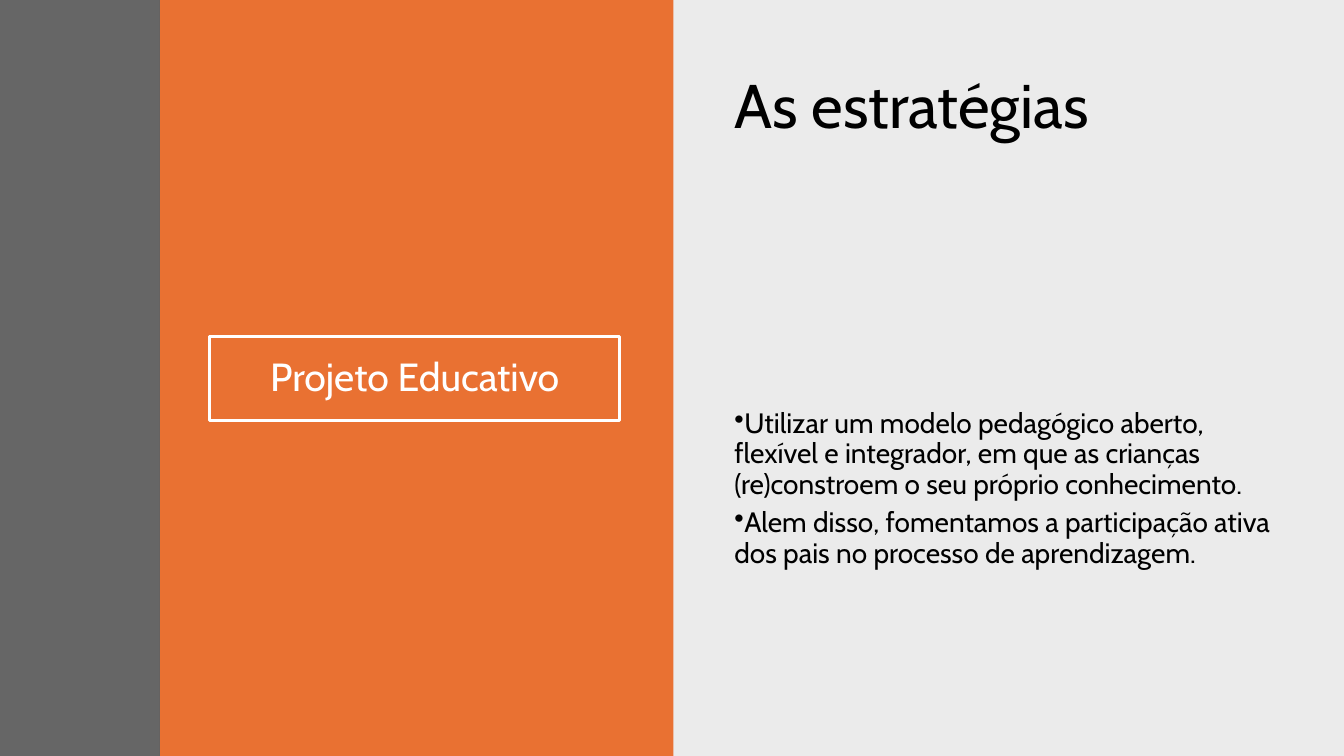
from dataclasses import dataclass
from typing import Optional

from lxml.etree import SubElement
from pptx import Presentation
from pptx.dml.color import RGBColor
from pptx.enum.shapes import MSO_SHAPE as Shape
from pptx.enum.text import MSO_ANCHOR as Anchor, PP_ALIGN as Align
from pptx.oxml.ns import qn
from pptx.util import Inches, Pt

WIDTH, HEIGHT = Inches(13.33), Inches(7.5)


@dataclass(frozen=True)
class Theme:
    font: str = "Cabin"
    black: str = "000000"
    white: str = "FFFFFF"
    orange: str = "E97132"
    gray: str = "404040"
    heading: int = 44
    label: int = 28
    body: int = 20
    border: int = 2


THEME = Theme()


@dataclass(frozen=True)
class Area:
    """A rectangle in shares of the slide's width and height."""
    left: float
    top: float
    width: float
    height: float

    def emu(self) -> tuple[int, int, int, int]:
        return (int(self.left * WIDTH), int(self.top * HEIGHT),
                int(self.width * WIDTH), int(self.height * HEIGHT))


@dataclass(frozen=True)
class Panel:
    area: Area
    color: Optional[str] = None
    opacity: int = 100
    border: Optional[str] = None


@dataclass(frozen=True)
class Copy:
    lines: tuple[str, ...]
    size: int
    color: str = THEME.black
    align: Align = Align.LEFT
    anchor: Anchor = Anchor.TOP
    space_after: int = 0
    bulleted: bool = False


SPLIT = 0.5
STRIPE = 0.119
TEXT_LEFT, TEXT_WIDTH, TEXT_HEIGHT = 0.539, 0.415, 0.372

WASH = Panel(Area(SPLIT, 0, 1 - SPLIT, 1), THEME.black, opacity=8)
ACCENT = Panel(Area(STRIPE, 0, 0.501 - STRIPE, 1), THEME.orange)
FRAME = Panel(Area(0.156, 0.445, 0.305, 0.111), border=THEME.white)
SIDE = Panel(Area(0, 0, STRIPE, 1), THEME.gray, opacity=80)

LABEL = Copy(("Projeto Educativo",), THEME.label, THEME.white,
             Align.CENTER, Anchor.MIDDLE)
TEXTS = (
    (0.093, Copy(("As estratégias",), THEME.heading)),
    (0.535, Copy((
        "Utilizar um modelo pedagógico aberto, flexível e integrador, "
        "em que as crianças (re)constroem o seu próprio conhecimento.",
        "Alem disso, fomentamos a participação ativa dos pais "
        "no processo de aprendizagem.",
    ), THEME.body, space_after=6, bulleted=True)),
)


def add_panel(page, panel: Panel):
    box = page.shapes.add_shape(Shape.RECTANGLE, *panel.area.emu())
    box.shadow.inherit = False
    if panel.color:
        box.fill.solid()
        box.fill.fore_color.rgb = RGBColor.from_string(panel.color)
    else:
        box.fill.background()
    if panel.opacity < 100:
        color = box.fill._xPr.find(f".//{qn('a:srgbClr')}")
        SubElement(color, qn("a:alpha"), val=str(panel.opacity * 1000))
    if panel.border:
        box.line.color.rgb = RGBColor.from_string(panel.border)
        box.line.width = Pt(THEME.border)
    else:
        box.line.fill.background()
    return box


def add_bullet(para) -> None:
    properties = para._p.get_or_add_pPr()
    properties.set("marL", "0")
    properties.set("indent", str(-Inches(0.25)))
    SubElement(properties, qn("a:buChar"), char="•")


def write(box, copy: Copy) -> None:
    frame = box.text_frame
    frame.word_wrap = True
    frame.vertical_anchor = copy.anchor
    for index, line in enumerate(copy.lines):
        para = frame.add_paragraph() if index else frame.paragraphs[0]
        para.text = line
        para.alignment = copy.align
        para.line_spacing = 0.9
        para.space_after = Pt(copy.space_after)
        if copy.bulleted:
            add_bullet(para)
        para.font.name = THEME.font
        para.font.size = Pt(copy.size)
        para.font.color.rgb = RGBColor.from_string(copy.color)


def main() -> None:
    deck = Presentation()
    deck.slide_width, deck.slide_height = WIDTH, HEIGHT
    page = deck.slides.add_slide(deck.slide_layouts[6])
    add_panel(page, WASH)
    add_panel(page, ACCENT)
    write(add_panel(page, FRAME), LABEL)
    add_panel(page, SIDE)
    for top, copy in TEXTS:
        area = Area(TEXT_LEFT, top, TEXT_WIDTH, TEXT_HEIGHT)
        write(page.shapes.add_textbox(*area.emu()), copy)
    deck.save("out.pptx")


if __name__ == "__main__":
    main()
